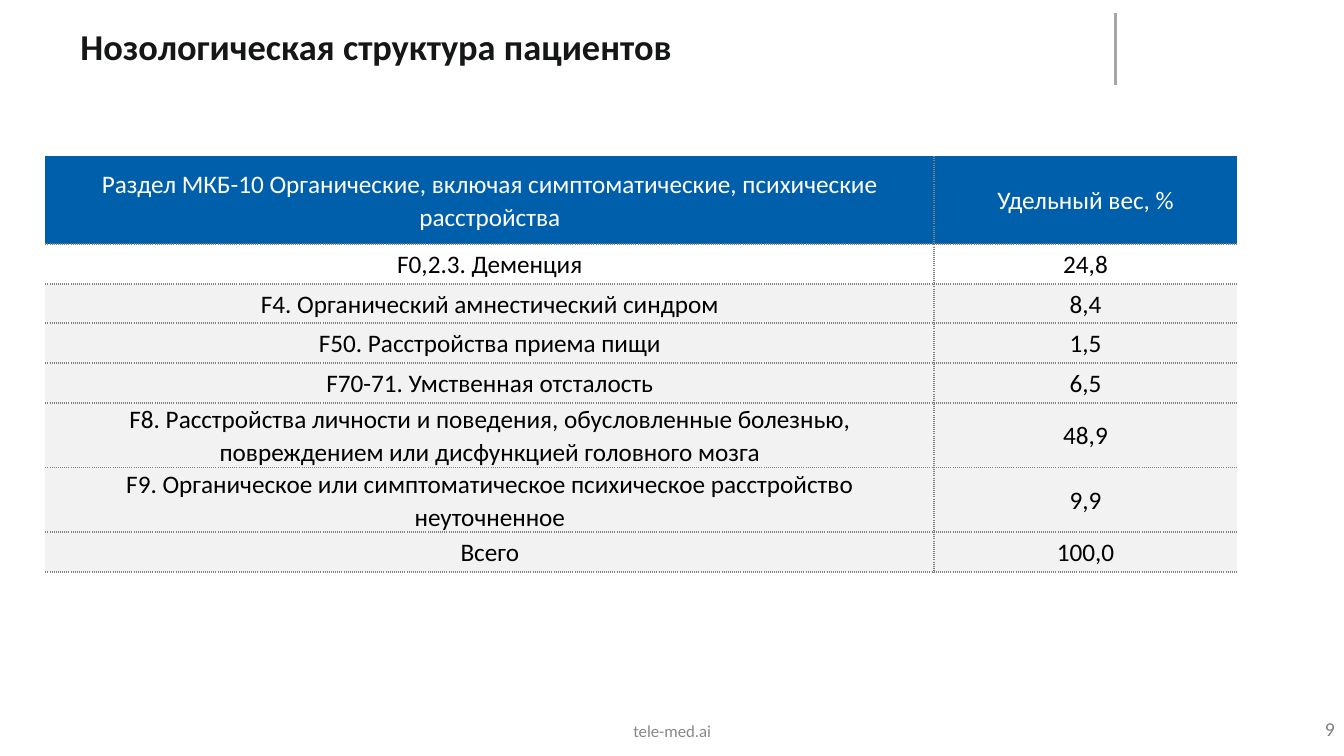
from lxml.etree import SubElement
from pptx import Presentation
from pptx.dml.color import RGBColor
from pptx.enum.shapes import MSO_CONNECTOR as Connector
from pptx.enum.text import MSO_ANCHOR as Anchor, PP_ALIGN as Align
from pptx.oxml import parse_xml
from pptx.oxml.ns import nsdecls, qn
from pptx.util import Pt


def color(value):
    return RGBColor.from_string(value)


def write(frame, text, size, ink, bold=False, align=Align.LEFT,
          spacing=1.0, after=0, margins=(7.2, 3.6)):
    frame.word_wrap = True
    frame.vertical_anchor = Anchor.MIDDLE
    frame.margin_left = frame.margin_right = Pt(margins[0])
    frame.margin_top = frame.margin_bottom = Pt(margins[1])
    paragraph = frame.paragraphs[0]
    paragraph.alignment = align
    paragraph.line_spacing = spacing
    paragraph.space_after = Pt(after)
    run = paragraph.add_run()
    run.text = text
    run.font.name = "Calibri"
    run.font.size = Pt(size)
    run.font.bold = bold
    run.font.color.rgb = color(ink)


deck = Presentation()
deck.slide_width, deck.slide_height = Pt(960), Pt(540)
slide = deck.slides.add_slide(deck.slide_layouts[6])
shapes = slide.shapes

divider = shapes.add_connector(Connector.STRAIGHT, Pt(797), Pt(9.4), Pt(797), Pt(60.5))
divider.line.color.rgb = color("A6A6A6")
divider.line.width = Pt(2)
SubElement(divider.line._get_or_add_ln().getparent(), qn("a:effectLst"))

captions = [
    ((50.4, 0, 715, 69.1), "Нозологическая структура пациентов",
     dict(size=26, ink="151616", bold=True, spacing=0.9)),
    ((321.8, 512.6, 316.8, 19.4), "tele-med.ai",
     dict(size=12, ink="888888", align=Align.CENTER, margins=(3.6, 3.6))),
    ((825.1, 505.4, 135.4, 29.5), "9",
     dict(size=14, ink="808080", align=Align.RIGHT)),
]
for place, text, style in captions:
    box = shapes.add_textbox(*map(Pt, place))
    write(box.text_frame, text, **style)

diagnoses = [
    ("Раздел МКБ-10 Органические, включая симптоматические, психические расстройства",
     "Удельный вес, %"),
    ("F0,2.3. Деменция", "24,8"),
    ("F4. Органический амнестический синдром", "8,4"),
    ("F50. Расстройства приема пищи", "1,5"),
    ("F70-71. Умственная отсталость", "6,5"),
    ("F8. Расстройства личности и поведения, обусловленные болезнью, "
     "повреждением или дисфункцией головного мозга", "48,9"),
    ("F9. Органическое или симптоматическое психическое расстройство неуточненное", "9,9"),
    ("Всего", "100,0"),
]
widths = [635, 216]
heights = [62.6] + [28.4] * 7
structure = shapes.add_table(len(diagnoses), 2, Pt(32.4), Pt(111.6),
                             Pt(sum(widths)), Pt(sum(heights))).table
for column, width in zip(structure.columns, widths):
    column.width = Pt(width)

dotted = ('<a:solidFill><a:srgbClr val="808080"/></a:solidFill>'
          '<a:prstDash val="sysDot"/>')
for row, entry in enumerate(diagnoses):
    structure.rows[row].height = Pt(heights[row])
    background = {0: "005FAB", 1: "FFFFFF"}.get(row, "F2F2F2")
    for col, text in enumerate(entry):
        cell = structure.cell(row, col)
        write(cell.text_frame, text, 18, "FFFFFF" if row == 0 else "000000",
              align=Align.CENTER, spacing=1.07, after=8)
        cell.vertical_anchor = Anchor.MIDDLE
        cell.margin_left = cell.margin_right = Pt(5)
        cell.margin_top = cell.margin_bottom = Pt(0)
        properties = cell._tc.get_or_add_tcPr()
        visible = {"L": col == 1, "R": col == 0, "T": row > 0, "B": True}
        for side, shown in visible.items():
            properties.append(parse_xml(
                f'<a:ln{side} {nsdecls("a")} w="{Pt(1.5)}">'
                f'{dotted if shown else "<a:noFill/>"}</a:ln{side}>'))
        cell.fill.solid()
        cell.fill.fore_color.rgb = color(background)

deck.save("out.pptx")
